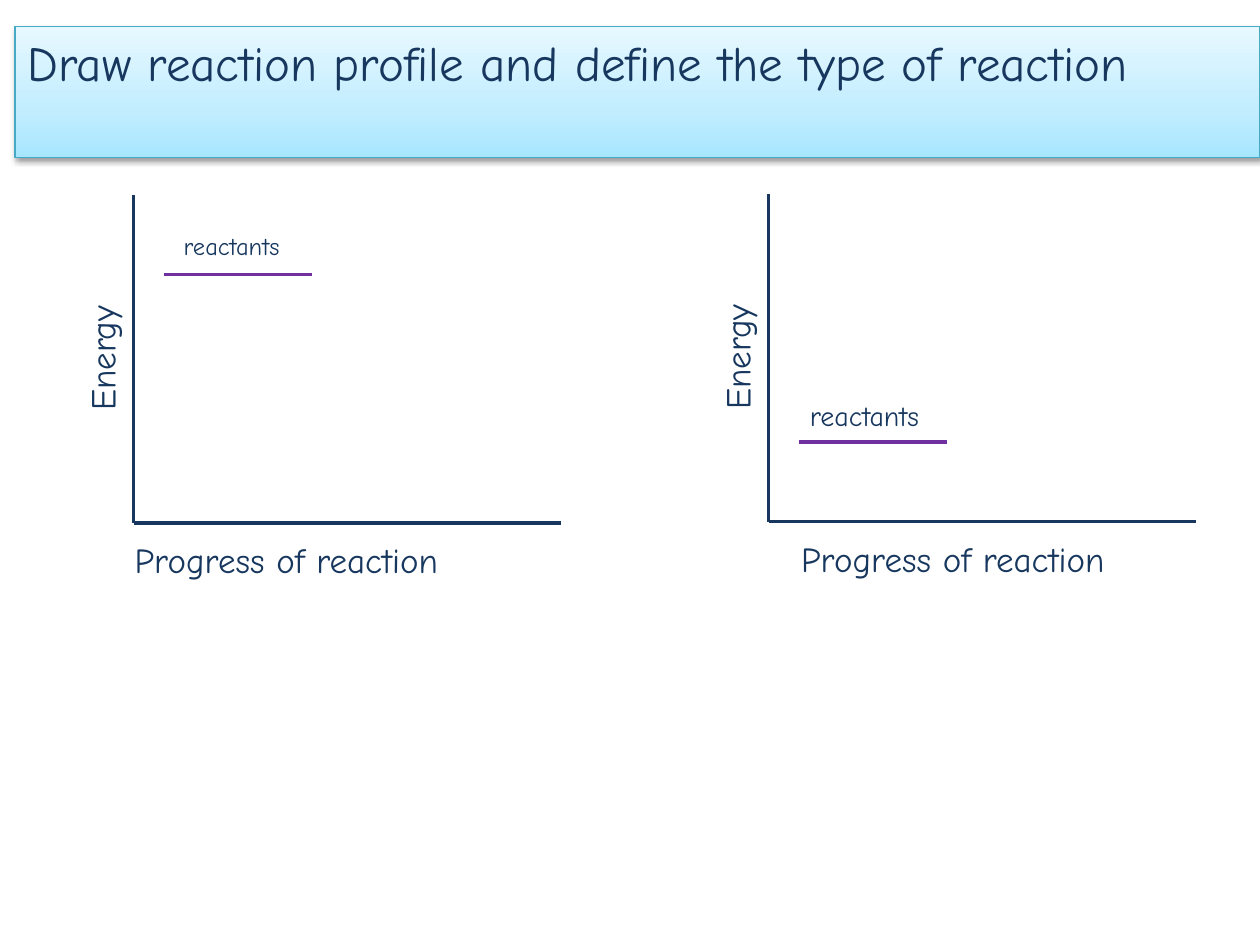
"""Build a slide with two blank reaction profiles on a grid of 100 columns by 75 rows."""
from copy import deepcopy

from lxml import etree
from pptx import Presentation
from pptx.dml.color import RGBColor
from pptx.enum.shapes import MSO_CONNECTOR, MSO_SHAPE
from pptx.enum.text import MSO_ANCHOR, PP_ALIGN
from pptx.oxml.ns import qn
from pptx.util import Inches, Pt

LINE = MSO_CONNECTOR.STRAIGHT
RECT = MSO_SHAPE.RECTANGLE
TOP = MSO_ANCHOR.TOP
LEFT = PP_ALIGN.LEFT

COLS, ROWS = 100, 75
UNIT = Inches(0.1)
FONT = "Comic Neue"
HUES = {"ink": "17375E", "level": "7030A0", "edge": "46AAC5",
        "deep": "A7E6FF", "mid": "C1EDFF", "pale": "E7F8FF", "shade": "000000"}


def hue(name):
    """Return the named colour."""
    return RGBColor.from_string(HUES[name])


def span(*cells):
    """Turn grid cells into slide lengths."""
    return [round(cell * UNIT) for cell in cells]


def write(shape, text, size, wrap=True):
    """Put one line of styled text in a shape."""
    frame = shape.text_frame
    frame.text = text
    frame.word_wrap = wrap
    frame.vertical_anchor = TOP
    line = frame.paragraphs[0]
    line.alignment = LEFT
    font = line.runs[0].font
    font.name, font.size = FONT, Pt(size)
    font.color.rgb = hue("ink")


def label(slide, box, text, size, wrap=True, turn=0):
    """Add a text box, turned if asked."""
    shape = slide.shapes.add_textbox(*span(*box))
    shape.rotation = turn
    write(shape, text, size, wrap)


def rule(slide, ends, name):
    """Add a straight line without a shadow."""
    line = slide.shapes.add_connector(LINE, *span(*ends))
    line.line.color.rgb = hue(name)
    line.line.width = Pt(2)
    etree.SubElement(line._element.spPr, qn("a:effectLst"))


def blend(shape, stops):
    """Fill a shape with a gradient that rises from its foot."""
    fill = shape.fill
    fill.gradient()
    fill.gradient_angle = 90
    marks = shape._element.spPr.find(".//" + qn("a:gsLst"))
    marks.insert(1, deepcopy(marks[0]))
    for stop, (place, name) in zip(fill.gradient_stops, stops):
        stop.position = place
        stop.color.rgb = hue(name)


def shade(shape):
    """Drop a soft shadow below a shape."""
    shape.shadow.inherit = False
    effects = shape._element.spPr.find(qn("a:effectLst"))
    drop = etree.SubElement(effects, qn("a:outerShdw"), blurRad=str(Pt(3.1)),
                            dist=str(Pt(1.6)), dir="5400000", rotWithShape="0")
    tint = etree.SubElement(drop, qn("a:srgbClr"), val=HUES["shade"])
    etree.SubElement(tint, qn("a:alpha"), val="38000")


def banner(slide, box, text):
    """Add the title band."""
    shape = slide.shapes.add_shape(RECT, *span(*box))
    blend(shape, [(0, "deep"), (0.35, "mid"), (1, "pale")])
    shape.line.color.rgb = hue("edge")
    shape.line.width = Pt(0.75)
    shade(shape)
    write(shape, text, 28)


def profile(slide, x, y, rise, size, inset, shift):
    """Add axes from their corner, with the reactants level above it."""
    level = y - rise
    rule(slide, (x, y - 26, x, y), "ink")
    rule(slide, (x, y, x + 33.9, y), "ink")
    rule(slide, (x + 2.4, level, x + 14.2, level), "level")
    label(slide, (x + inset, level - 3.95, size * 0.77, size * 0.24),
          "reactants", size, wrap=False)
    label(slide, (x - 8.8, y - 16.4, 12.6, 4.4), "Energy", 20, turn=270)
    label(slide, (x + shift, y + 0.75, 35, 4.4), "Progress of reaction", 20)


def main():
    """Build and save the slide."""
    deck = Presentation()
    deck.slide_width, deck.slide_height = span(COLS, ROWS)
    slide = deck.slides.add_slide(deck.slide_layouts[6])
    profile(slide, 61, 41.4, 6.3, 16, 2.3, 1.6)
    profile(slide, 10.6, 41.5, 19.7, 14, 3, -0.9)
    banner(slide, (1.2, 2.1, COLS - 1.2, 10.4),
           "Draw reaction profile and define the type of reaction")
    deck.save("out.pptx")


if __name__ == "__main__":
    main()
